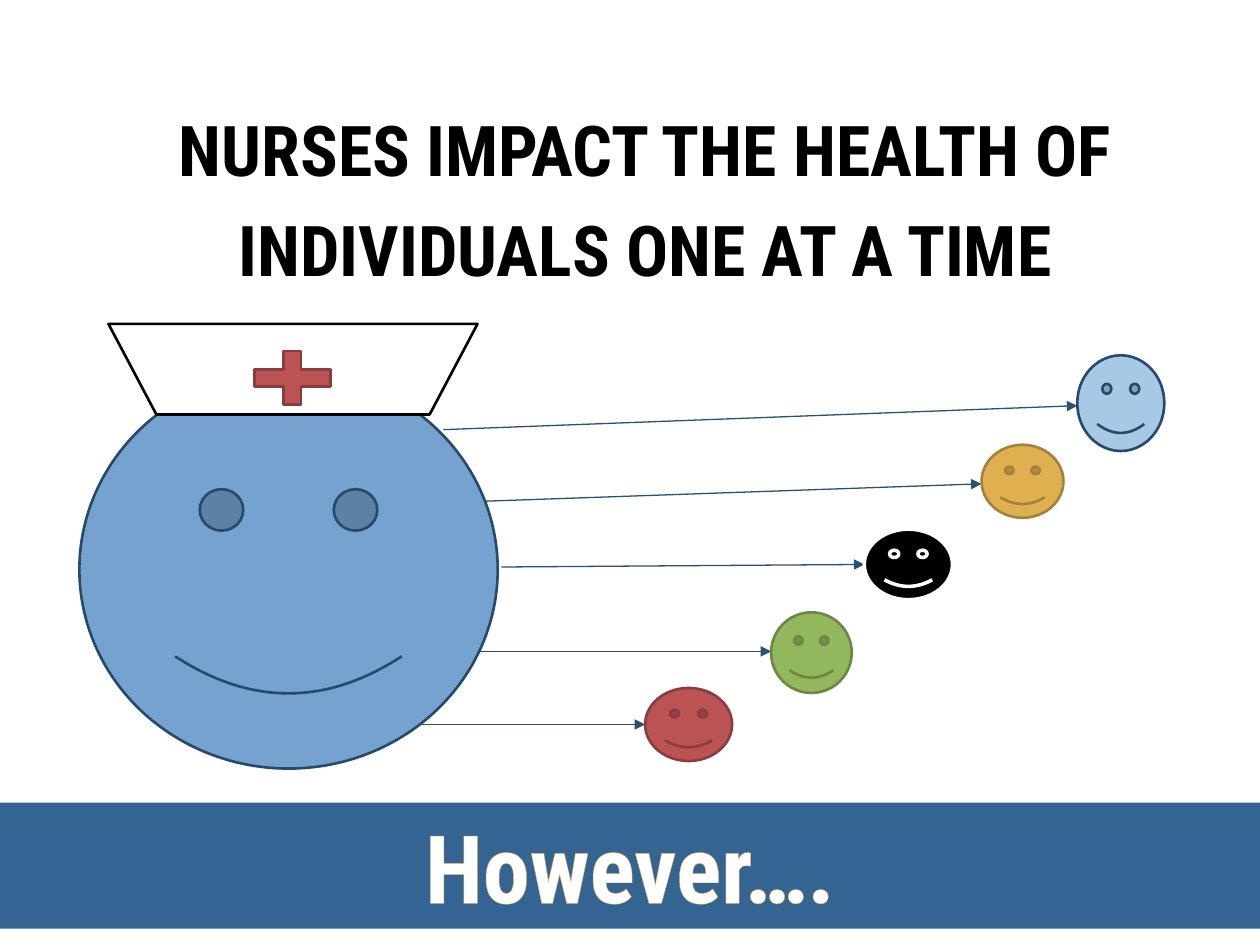
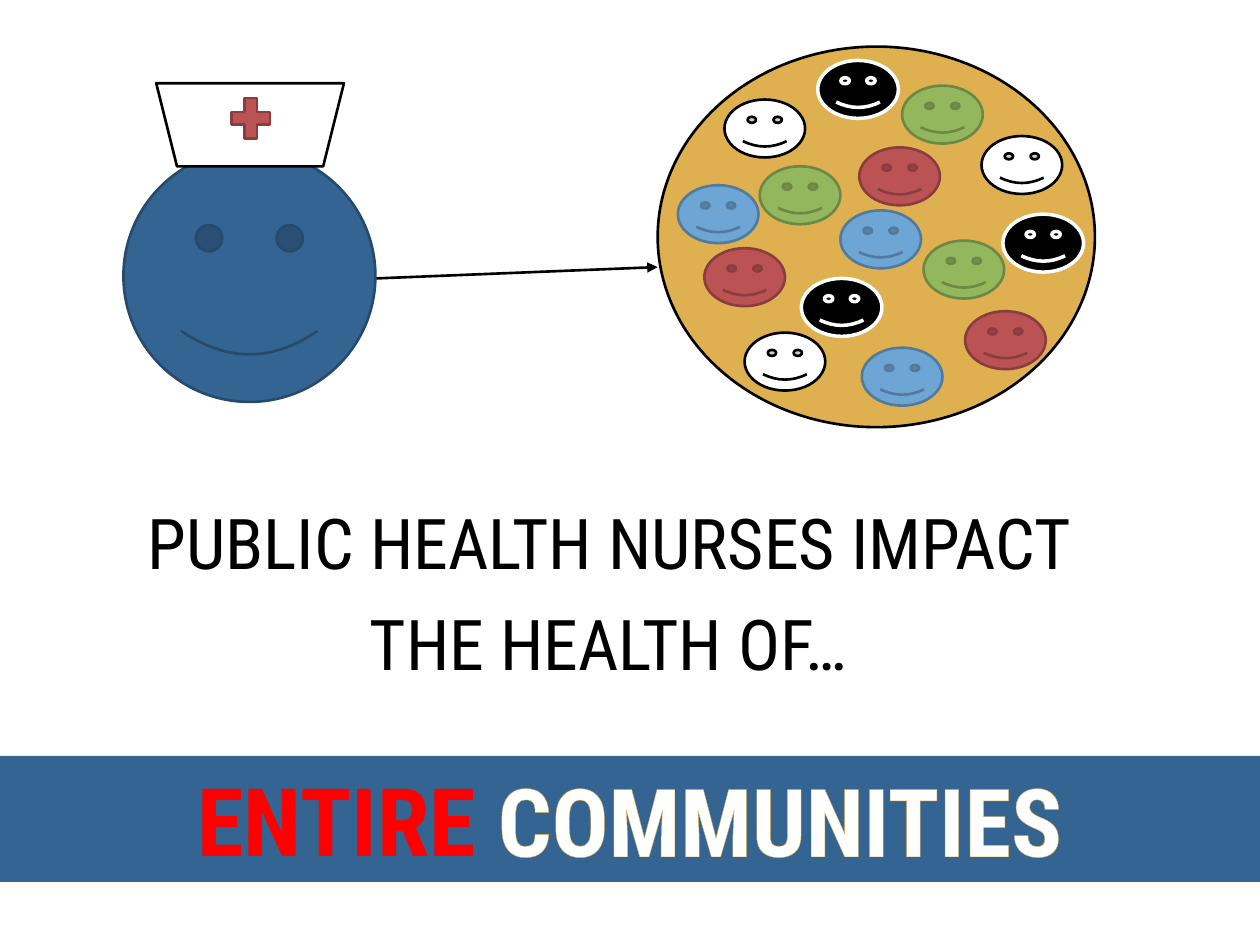
"""Build two slides on how nurses reach individuals and whole communities."""
from typing import NamedTuple

from lxml import etree
from pptx import Presentation
from pptx.dml.color import RGBColor
from pptx.enum import dml, shapes, text
from pptx.oxml import ns
from pptx.util import Inches, Pt

FONT = "Roboto Condensed"
BLACK = RGBColor(0x00, 0x00, 0x00)
WHITE = RGBColor(0xFF, 0xFF, 0xFF)
BRIGHT_RED = RGBColor(0xFF, 0x00, 0x00)
NAVY = RGBColor(0x34, 0x64, 0x92)
NAVY_EDGE = RGBColor(0x26, 0x4A, 0x6C)
ARROW_BLUE = RGBColor(0x2A, 0x50, 0x75)
GOLD = RGBColor(0xDE, 0xB0, 0x50)
PALE_GOLD = RGBColor(0xEB, 0xD0, 0x96)
KIND = shapes.MSO_SHAPE


class Style(NamedTuple):
    """Fill and outline of a shape."""
    fill: RGBColor
    line: RGBColor
    width: float = 1.5


class Box(NamedTuple):
    """Left, top, width and height in inches."""
    left: float
    top: float
    width: float
    height: float


class Face(NamedTuple):
    """A smiling person."""
    box: Box
    style: Style


class Nurse(NamedTuple):
    """A large face with a cap and a cross."""
    face: Face
    cap: Box
    cap_slant: float
    cross: Box


class Arrow(NamedTuple):
    """Start and end points of an arrow in inches."""
    start: tuple[float, float]
    end: tuple[float, float]


class BandWord(NamedTuple):
    """A run in the band; no colour means the patterned fill."""
    wording: str
    color: RGBColor | None = None


RED_STYLE = Style(RGBColor(0xBB, 0x53, 0x54), RGBColor(0x8A, 0x3D, 0x3E))
GREEN_STYLE = Style(RGBColor(0x93, 0xB7, 0x5D), RGBColor(0x6D, 0x87, 0x45))
BLUE_STYLE = Style(RGBColor(0x6D, 0xA5, 0xD4), RGBColor(0x51, 0x7A, 0x9D))
GOLD_STYLE = Style(GOLD, RGBColor(0xA4, 0x82, 0x3B))
PALE_BLUE_STYLE = Style(RGBColor(0xA7, 0xC9, 0xE5), NAVY_EDGE)
BLACK_STYLE = Style(BLACK, WHITE, 2)
WHITE_STYLE = Style(WHITE, BLACK)

PATIENTS = [
    Face(Box(8.55, 2.82, 0.69, 0.76), PALE_BLUE_STYLE),
    Face(Box(7.79, 3.53, 0.65, 0.58), GOLD_STYLE),
    Face(Box(6.86, 4.2, 0.7, 0.56), BLACK_STYLE),
    Face(Box(6.12, 4.86, 0.64, 0.64), GREEN_STYLE),
    Face(Box(5.12, 5.46, 0.69, 0.58), RED_STYLE),
]
PATIENT_ARROWS = [
    Arrow((3.52, 3.41), (8.55, 3.22)),
    Arrow((3.79, 3.98), (7.79, 3.84)),
    Arrow((3.98, 4.5), (6.86, 4.48)),
    Arrow((3.79, 5.17), (6.12, 5.17)),
    Arrow((3.31, 5.75), (5.12, 5.75)),
]
BEDSIDE_NURSE = Nurse(
    Face(Box(0.63, 2.94, 3.32, 3.16), Style(RGBColor(0x75, 0xA2, 0xCE), NAVY_EDGE)),
    Box(0.86, 2.57, 2.93, 0.72), 0.529, Box(1.91, 2.71, 0.82, 0.58))
PUBLIC_NURSE = Nurse(
    Face(Box(0.98, 1.19, 2, 2), Style(NAVY, NAVY_EDGE)),
    Box(1.24, 0.66, 1.49, 0.66), 0.25, Box(1.78, 0.72, 0.42, 0.44))
COMMUNITY = Box(5.22, 0.37, 3.47, 3.02)
MEMBER_SIZE = (0.64, 0.46)
MEMBERS = [
    (GREEN_STYLE, [(7.16, 0.68), (6.03, 1.32), (7.33, 1.91)]),
    (WHITE_STYLE, [(7.79, 1.08), (5.75, 0.79), (5.91, 2.64)]),
    (RED_STYLE, [(5.59, 1.97), (7.66, 2.47), (6.82, 1.17)]),
    (BLUE_STYLE, [(6.84, 2.76), (6.67, 1.67), (5.38, 1.47)]),
    (BLACK_STYLE, [(7.96, 1.7), (6.49, 0.48), (6.36, 2.21)]),
]


def add_figure(slide, kind: KIND, box: Box, style: Style):
    """Add a filled and outlined preset shape."""
    shape = slide.shapes.add_shape(kind, *map(Inches, box))
    shape.shadow.inherit = False
    shape.fill.solid()
    shape.fill.fore_color.rgb = style.fill
    shape.line.color.rgb = style.line
    shape.line.width = Pt(style.width)
    return shape


def add_face(slide, face: Face) -> None:
    """Add a smiley face."""
    add_figure(slide, KIND.SMILEY_FACE, face.box, face.style)


def add_nurse(slide, nurse: Nurse) -> None:
    """Add a face wearing a nurse's cap."""
    add_face(slide, nurse.face)
    cap = add_figure(slide, KIND.TRAPEZOID, nurse.cap, WHITE_STYLE)
    cap.rotation = 180
    cap.adjustments[0] = nurse.cap_slant
    add_figure(slide, KIND.MATH_PLUS, nurse.cross, RED_STYLE)


def add_arrow(slide, arrow: Arrow, color: RGBColor, width: float) -> None:
    """Add a straight line with a triangular head."""
    connector = slide.shapes.add_connector(
        shapes.MSO_CONNECTOR.STRAIGHT, *map(Inches, arrow.start + arrow.end))
    connector.line.color.rgb = color
    connector.line.width = Pt(width)
    line = connector.line._get_or_add_ln()
    etree.SubElement(line, ns.qn("a:tailEnd"), type="triangle")
    etree.SubElement(connector._element.spPr, ns.qn("a:effectLst"))


def add_statement(slide, left: float, top: float, wording: str, bold: bool) -> None:
    """Add the large centred statement."""
    box = slide.shapes.add_textbox(Inches(left), Inches(top), Inches(8.5), Inches(1.8))
    frame = box.text_frame
    frame.word_wrap = True
    frame.vertical_anchor = text.MSO_ANCHOR.MIDDLE
    paragraph = frame.paragraphs[0]
    paragraph.alignment = text.PP_ALIGN.CENTER
    paragraph.line_spacing = 1.2
    run = paragraph.add_run()
    run.text = wording
    run.font.name = FONT
    run.font.size = Pt(40)
    run.font.bold = bold
    run.font.color.rgb = BLACK


def add_band(slide, top: float, words: list[BandWord]) -> None:
    """Add the full-width band with gold-edged words."""
    band = add_figure(slide, KIND.RECTANGLE, Box(0, top, 10, 1), Style(NAVY, NAVY))
    band.line.fill.background()
    paragraph = band.text_frame.paragraphs[0]
    paragraph.alignment = text.PP_ALIGN.CENTER
    for word in words:
        run = paragraph.add_run()
        run.text = word.wording
        font = run.font
        font.name = FONT
        font.size = Pt(54)
        font.bold = True
        if word.color is None:
            font.fill.patterned()
            font.fill.pattern = dml.MSO_PATTERN.LIGHT_DOWNWARD_DIAGONAL
            font.fill.fore_color.rgb = PALE_GOLD
            font.fill.back_color.rgb = WHITE
        else:
            font.color.rgb = word.color
        outline = etree.Element(ns.qn("a:ln"), w=str(Pt(1)))
        fill = etree.SubElement(outline, ns.qn("a:solidFill"))
        etree.SubElement(fill, ns.qn("a:srgbClr"), val=str(GOLD))
        run._r.get_or_add_rPr().insert(0, outline)


def build_individuals(slide) -> None:
    """Show one nurse reaching patients one by one."""
    add_statement(slide, 0.87, 0.61,
                  "NURSES IMPACT THE HEALTH OF INDIVIDUALS ONE AT A TIME", True)
    for arrow in PATIENT_ARROWS:
        add_arrow(slide, arrow, ARROW_BLUE, 0.75)
    for patient in PATIENTS:
        add_face(slide, patient)
    add_nurse(slide, BEDSIDE_NURSE)
    add_band(slide, 6.37, [BandWord("However….")])


def build_communities(slide) -> None:
    """Show one nurse reaching a whole community."""
    add_statement(slide, 0.58, 3.73, "PUBLIC HEALTH NURSES IMPACT THE HEALTH OF…", False)
    add_figure(slide, KIND.OVAL, COMMUNITY, Style(GOLD, BLACK))
    for style, places in MEMBERS:
        for place in places:
            add_face(slide, Face(Box(*place, *MEMBER_SIZE), style))
    add_arrow(slide, Arrow((2.98, 2.21), (5.22, 2.12)), BLACK, 1.5)
    add_nurse(slide, PUBLIC_NURSE)
    add_band(slide, 6, [BandWord("ENTIRE", BRIGHT_RED), BandWord(" COMMUNITIES")])


def main() -> None:
    """Build and save the presentation."""
    presentation = Presentation()
    presentation.slide_width = Inches(10)
    presentation.slide_height = Inches(7.5)
    for build in (build_individuals, build_communities):
        build(presentation.slides.add_slide(presentation.slide_layouts[6]))
    presentation.save("out.pptx")


if __name__ == "__main__":
    main()
